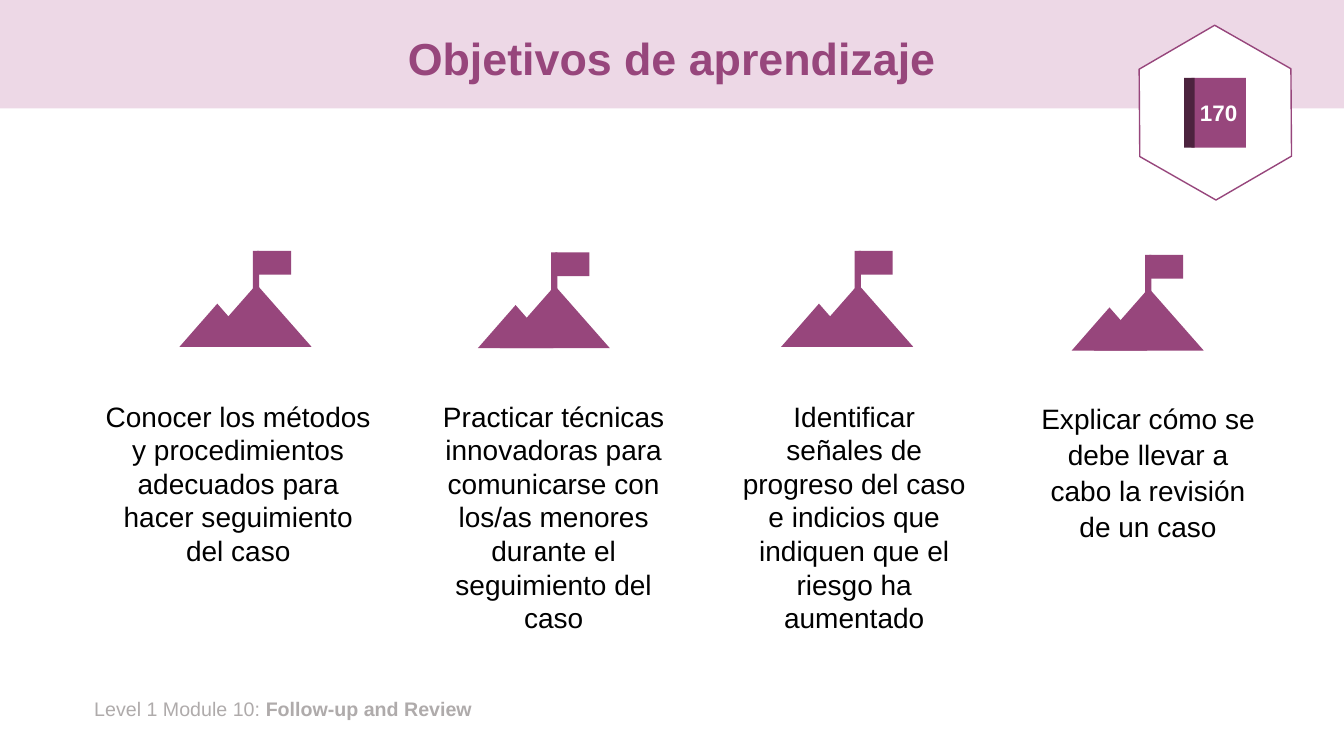
"""Build the learning objectives slide with four mountain icons and a page badge."""
from dataclasses import dataclass

from pptx import Presentation
from pptx.dml.color import RGBColor
from pptx.enum.shapes import MSO_SHAPE as Shape
from pptx.enum.text import MSO_ANCHOR as Anchor, PP_ALIGN as Align
from pptx.util import Pt


@dataclass(frozen=True)
class Theme:
    font: str = "Arial"
    plum: str = "97467C"
    dark_plum: str = "4C233E"
    pale_pink: str = "EDD8E6"
    grey: str = "AFABAB"
    black: str = "000000"
    white: str = "FFFFFF"
    title_size: int = 32
    body_size: int = 20
    badge_size: int = 16
    footer_size: int = 14


theme = Theme()


def add_block(shapes, kind, left, top, width, height, color):
    shape = shapes.add_shape(kind, Pt(left), Pt(top), Pt(width), Pt(height))
    shape.shadow.inherit = False
    shape.fill.solid()
    shape.fill.fore_color.rgb = RGBColor.from_string(color)
    shape.line.fill.background()
    return shape


def write_text(shape, *texts, size, color, bold=(False,), align=Align.CENTER,
               anchor=Anchor.TOP, spacing=None, wrap=True):
    frame = shape.text_frame
    frame.word_wrap = wrap
    frame.vertical_anchor = anchor
    paragraph = frame.paragraphs[0]
    paragraph.alignment = align
    paragraph.line_spacing = spacing
    for text, is_bold in zip(texts, bold):
        run = paragraph.add_run()
        run.text = text
        run.font.name = theme.font
        run.font.size = Pt(size)
        run.font.bold = is_bold
        run.font.color.rgb = RGBColor.from_string(color)


presentation = Presentation()
presentation.slide_width, presentation.slide_height = Pt(960), Pt(540)
slide = presentation.slides.add_slide(presentation.slide_layouts[5])

band = add_block(slide.shapes, Shape.RECTANGLE, 0, 0, 960, 77.5, theme.pale_pink)
title = slide.shapes.title
title.element.addprevious(band.element)
title.left, title.top, title.width, title.height = Pt(66), Pt(9.3), Pt(828), Pt(68.4)
write_text(title, "Objetivos de aprendizaje", size=theme.title_size, color=theme.plum,
           bold=(True,), anchor=Anchor.MIDDLE, spacing=0.9)

footer = slide.shapes.add_textbox(Pt(60.2), Pt(494.6), Pt(328), Pt(24.5))
write_text(footer, "Level 1 Module 10: ", "Follow-up and Review", size=theme.footer_size,
           color=theme.grey, bold=(False, True), align=Align.LEFT)

objectives = [
    ("Conocer los métodos y procedimientos adecuados para hacer seguimiento del caso",
     66.2, 208, None, 128.2, 179.3),
    ("Practicar técnicas innovadoras para comunicarse con los/as menores durante el "
     "seguimiento del caso", 298, 195, None, 341.3, 180.3),
    ("Identificar señales de progreso del caso e indicios que indiquen que el riesgo "
     "ha aumentado", 522.7, 175, None, 558, 179.3),
    ("Explicar cómo se debe llevar a cabo la revisión de un caso",
     733.7, 172.8, 1.07, 765.5, 182),
]
mountain_parts = [
    (Shape.RECTANGLE, 52.4, 0, 4.5, 28.8),
    (Shape.RECTANGLE, 55.4, 0, 24.3, 17),
    (Shape.ISOSCELES_TRIANGLE, 15.8, 23.8, 78.5, 44.6),
    (Shape.ISOSCELES_TRIANGLE, 0, 37.6, 54, 30.8),
]
for text, text_left, text_width, spacing, icon_left, icon_top in objectives:
    caption = slide.shapes.add_textbox(Pt(text_left), Pt(281.5), Pt(text_width), Pt(177))
    write_text(caption, text, size=theme.body_size, color=theme.black, spacing=spacing)
    mountain = slide.shapes.add_group_shape()
    for kind, left, top, width, height in mountain_parts:
        add_block(mountain.shapes, kind, icon_left + left, icon_top + top,
                  width, height, theme.plum)

badge = slide.shapes.add_group_shape()
hexagon = add_block(badge.shapes, Shape.HEXAGON, 805.5, 26.5, 125.3, 108, theme.white)
hexagon.adjustments[0] = 0.29
hexagon.rotation = 29.7
hexagon.line.color.rgb = RGBColor.from_string(theme.plum)
hexagon.line.width = Pt(1)
book = add_block(badge.shapes, Shape.RECTANGLE, 851, 55.6, 39, 49.9, theme.plum)
write_text(book, "170", size=theme.badge_size, color=theme.white, bold=(True,),
           anchor=Anchor.MIDDLE, wrap=False)
add_block(badge.shapes, Shape.RECTANGLE, 845.8, 55.6, 7.6, 49.9, theme.dark_plum)

presentation.save("out.pptx")
